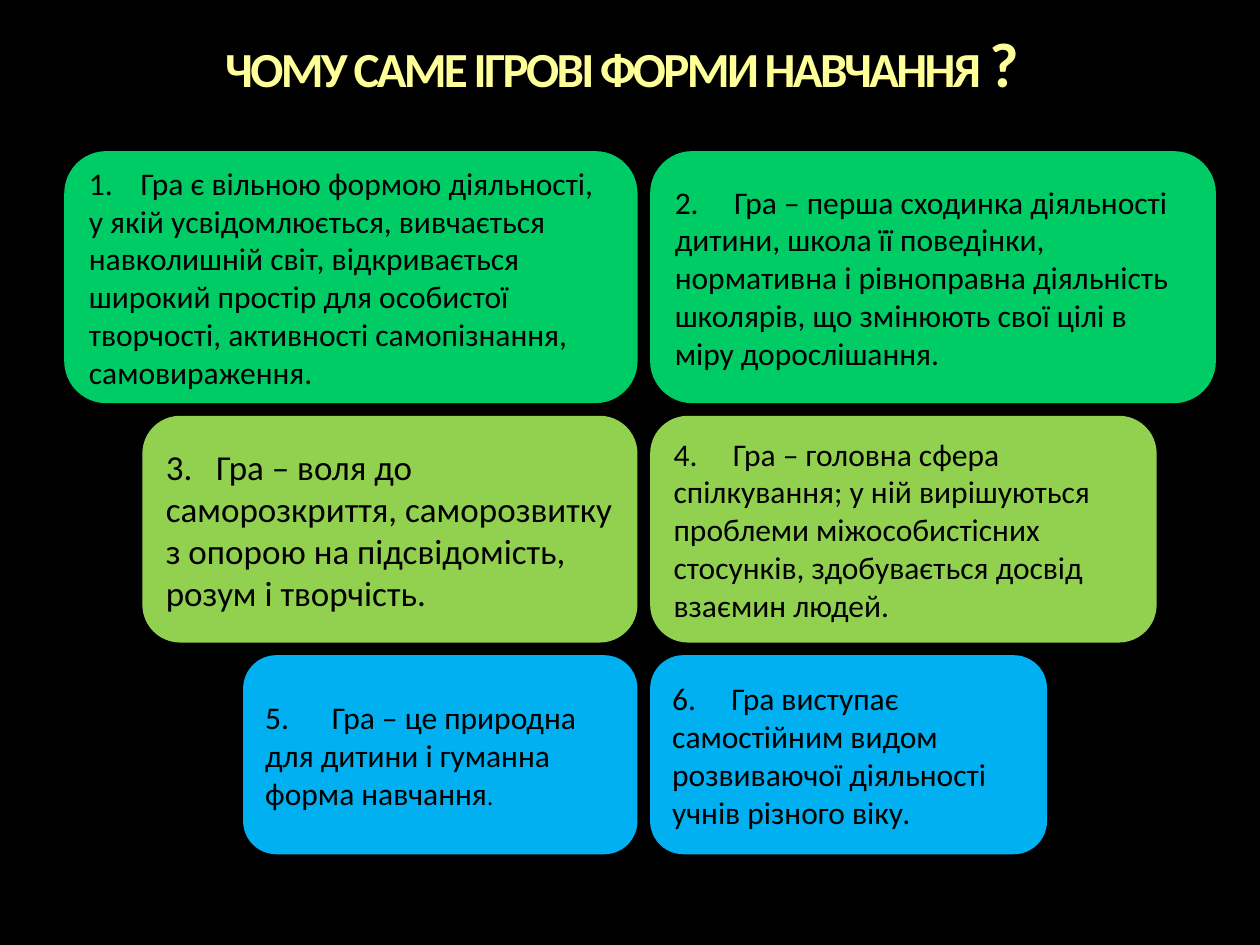
from pptx import Presentation
from pptx.dml.color import RGBColor
from pptx.enum.shapes import MSO_SHAPE as SHAPE
from pptx.enum.text import MSO_ANCHOR as ANCHOR, PP_ALIGN as ALIGN
from pptx.oxml.ns import qn
from pptx.util import Inches, Pt
from lxml import etree

FONT = "Calibri"
CENTER, GAP = 5.06, 0.1

# Each row: top, height, fill, left card, right card
# Each card: width, tab stop, text size, number, text
ROWS = [
    (1.2, 2, "00CC66",
     (4.55, 0.41, 18, "1.", [("Гра є вільною формою діяльності, у якій усвідомлюється, "
                              "вивчається навколишній світ, відкривається широкий простір "
                              "для особистої творчості, активності самопізнання, "
                              "самовираження.", 18)]),
     (4.49, 0.47, 18, "2.", [("Гра – перша сходинка діяльності дитини, школа її поведінки, "
                              "нормативна і рівноправна діяльність школярів, що змінюють "
                              "свої цілі в міру дорослішання.", 18)])),
    (3.3, 1.8, "92D050",
     (3.93, 0.4, 20, "3.", [("Гра – воля до саморозкриття, саморозвитку з опорою на "
                             "підсвідомість, розум і творчість.", 20)]),
     (4.02, 0.47, 18, "4.", [("Гра – головна сфера спілкування; у ній вирішуються проблеми "
                              "міжособистісних стосунків, здобувається досвід взаємин "
                              "людей.", 18)])),
    (5.2, 1.58, "00B0F0",
     (3.13, 0.53, 18, "5.", [("Гра – це природна для дитини і гуманна форма навчання", 18),
                             (".", 14)]),
     (3.15, 0.47, 18, "6.", [("Гра виступає самостійним видом розвиваючої діяльності "
                              "учнів різного віку.", 18)])),
]


def rgb(value):
    return RGBColor.from_string(value)


def add_tab_stop(p, pos):
    tabs = etree.SubElement(p._p.get_or_add_pPr(), qn("a:tabLst"))
    etree.SubElement(tabs, qn("a:tab"), pos=str(Inches(pos)), algn="l")


def add_title(slide, left, top, width, height):
    tf = slide.shapes.add_textbox(Inches(left), Inches(top),
                                  Inches(width), Inches(height)).text_frame
    tf.word_wrap = True
    tf.margin_left = tf.margin_right = tf.margin_top = tf.margin_bottom = 0
    p = tf.paragraphs[0]
    p.alignment = ALIGN.CENTER
    p.line_spacing = 0.9
    p.font.name = FONT
    p.font.bold = True
    p.font.color.rgb = rgb("FFFF99")
    for text, size in (("ЧОМУ САМЕ ІГРОВІ ФОРМИ НАВЧАННЯ ", 28), ("?", 36)):
        r = p.add_run()
        r.text = text
        r.font.size = Pt(size)
        r._r.get_or_add_rPr().set("spc", "-150")


def add_card(slide, left, top, height, fill, card):
    width, tab, size, number, parts = card
    sp = slide.shapes.add_shape(SHAPE.FLOWCHART_ALTERNATE_PROCESS, Inches(left),
                                Inches(top), Inches(width), Inches(height))
    sp.shadow.inherit = False
    sp.fill.solid()
    sp.fill.fore_color.rgb = rgb(fill)
    sp.line.fill.background()
    tf = sp.text_frame
    tf.word_wrap = True
    tf.vertical_anchor = ANCHOR.MIDDLE
    p = tf.paragraphs[0]
    p.alignment = ALIGN.LEFT
    add_tab_stop(p, tab)
    p.font.name = FONT
    p.font.color.rgb = rgb("000000")
    for text, run_size in [(number + "\t", size), *parts]:
        r = p.add_run()
        r.text = text
        r.font.size = Pt(run_size)


def add_row(slide, top, height, fill, left_card, right_card):
    """Place two cards on either side of the gap in the middle."""
    add_card(slide, CENTER - left_card[0], top, height, fill, left_card)
    add_card(slide, CENTER + GAP, top, height, fill, right_card)


def main():
    prs = Presentation()
    prs.slide_width, prs.slide_height = Inches(10), Inches(7.5)
    slide = prs.slides.add_slide(prs.slide_layouts[6])
    slide.background.fill.solid()
    slide.background.fill.fore_color.rgb = rgb("000000")
    add_title(slide, 0.35, 0.26, 9.17, 0.55)
    for row in ROWS:
        add_row(slide, *row)
    prs.save("out.pptx")


if __name__ == "__main__":
    main()
